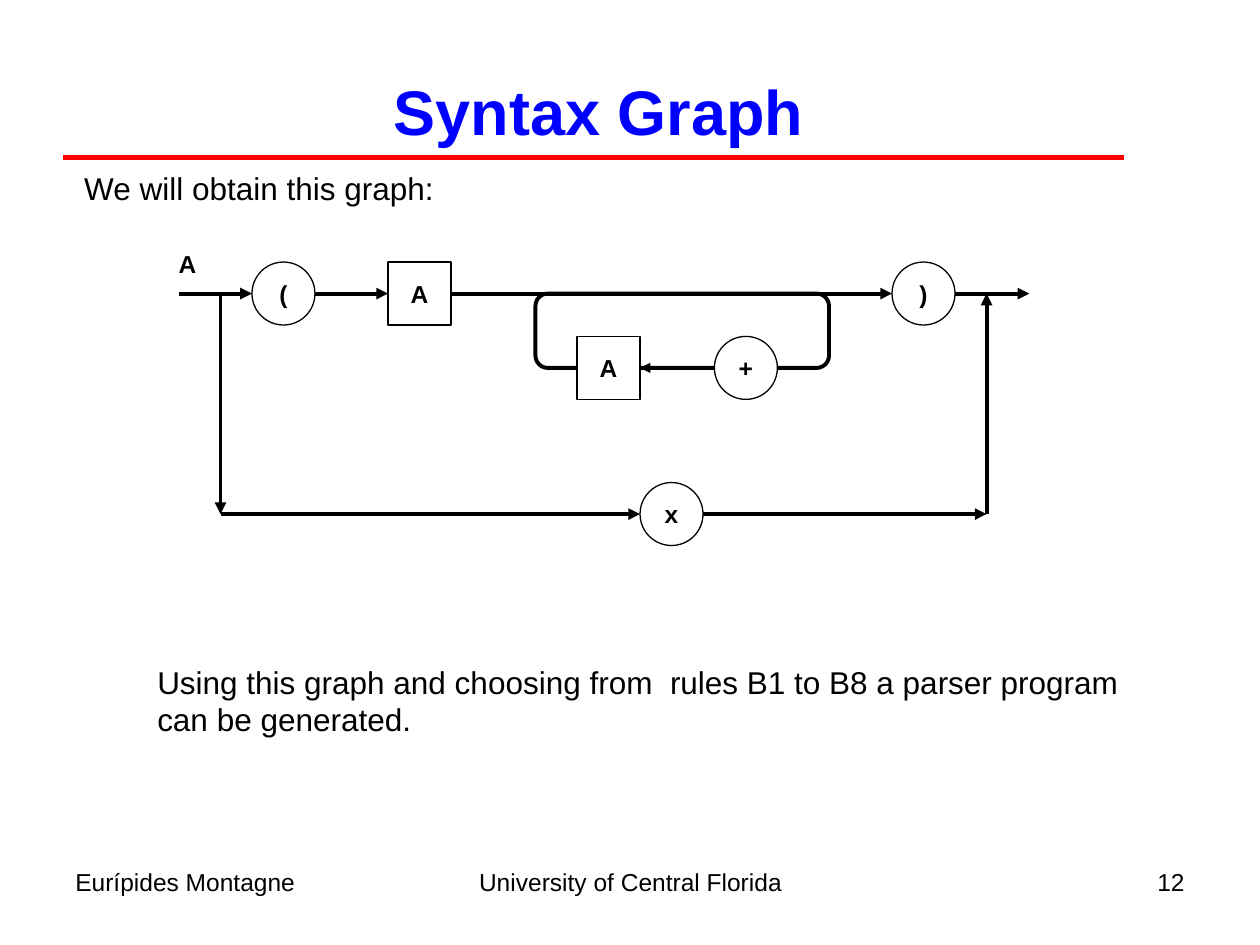
from dataclasses import dataclass

from lxml.etree import SubElement
from pptx import Presentation
from pptx.dml.color import RGBColor
from pptx.enum.shapes import MSO_CONNECTOR, MSO_SHAPE
from pptx.enum.text import MSO_ANCHOR, PP_ALIGN
from pptx.oxml.ns import qn
from pptx.util import Inches, Pt


@dataclass(frozen=True)
class Theme:
    font: str = "Arial"
    ink: RGBColor = RGBColor(0, 0, 0)
    paper: RGBColor = RGBColor(255, 255, 255)
    title_color: RGBColor = RGBColor(0, 0, 255)
    rule_color: RGBColor = RGBColor(255, 0, 0)
    title_size: int = 36
    body_size: int = 18
    label_size: int = 14
    thin: float = 0.75
    thick: float = 2.25
    rule: float = 3


class SlideBuilder:
    NODE_SIZE = 0.5

    def __init__(self, slide, theme):
        self.slide = slide
        self.theme = theme

    def style(self, paragraph, size, bold=False, color=None, align=PP_ALIGN.LEFT):
        paragraph.alignment = align
        font = paragraph.font
        font.name = self.theme.font
        font.size = Pt(size)
        font.bold = bold
        font.color.rgb = color or self.theme.ink

    def text(self, box, lines, size, wrap=False, anchor=MSO_ANCHOR.TOP, **style):
        shape = self.slide.shapes.add_textbox(*map(Inches, box))
        frame = shape.text_frame
        frame.word_wrap = wrap
        frame.vertical_anchor = anchor
        frame.text = "\n".join(lines)
        for paragraph in frame.paragraphs:
            self.style(paragraph, size, **style)

    def outline(self, kind, box, width):
        shape = self.slide.shapes.add_shape(kind, *map(Inches, box))
        shape.shadow.inherit = False
        shape.fill.background()
        shape.line.color.rgb = self.theme.ink
        shape.line.width = Pt(width)
        return shape

    def node(self, kind, left, middle, label):
        """Draw a labelled graph symbol centred vertically on its row."""
        size = self.NODE_SIZE
        shape = self.outline(kind, (left, middle - size / 2, size, size), self.theme.thin)
        shape.fill.solid()
        shape.fill.fore_color.rgb = self.theme.paper
        frame = shape.text_frame
        frame.word_wrap = False
        frame.vertical_anchor = MSO_ANCHOR.MIDDLE
        frame.text = label
        self.style(frame.paragraphs[0], self.theme.label_size, bold=True,
                   align=PP_ALIGN.CENTER)
        return shape

    def line(self, start, end, width, color=None):
        connector = self.slide.shapes.add_connector(
            MSO_CONNECTOR.STRAIGHT, *map(Inches, start + end))
        connector.line.color.rgb = color or self.theme.ink
        connector.line.width = Pt(width)
        SubElement(connector._element.spPr, qn("a:effectLst"))
        return connector

    def arrow(self, start, end, width=None):
        connector = self.line(start, end, width or self.theme.thick)
        SubElement(connector.line._get_or_add_ln(), qn("a:tailEnd"), type="triangle")
        return connector


def add_frame(builder):
    """Add the title, its rule and the footer."""
    theme = builder.theme
    builder.text((0.25, 0.25, 9, 1.25), ["Syntax Graph"], theme.title_size, wrap=True,
                 anchor=MSO_ANCHOR.MIDDLE, bold=True, color=theme.title_color,
                 align=PP_ALIGN.CENTER)
    builder.line((0.5, 1.25), (8.92, 1.25), theme.rule, theme.rule_color)
    footers = [
        (0.5, 2.33, "Eurípides Montagne", PP_ALIGN.LEFT),
        (3.42, 3.17, "University of Central Florida", PP_ALIGN.CENTER),
        (7.17, 2.33, "12", PP_ALIGN.RIGHT),
    ]
    for left, width, label, align in footers:
        builder.text((left, 6.83, width, 0.52), [label], theme.label_size,
                     wrap=True, align=align)


def add_syntax_graph(builder):
    theme = builder.theme
    main_row, loop_row, bypass_row = 2.33, 2.92, 4.08
    branch, merge = 1.75, 7.83

    builder.outline(MSO_SHAPE.FLOWCHART_ALTERNATE_PROCESS,
                    (4.25, main_row, 2.33, loop_row - main_row), theme.thick)
    first_a = builder.node(MSO_SHAPE.RECTANGLE, 3.08, main_row, "A")
    repeated_a = builder.node(MSO_SHAPE.RECTANGLE, 4.58, loop_row, "A")
    terminals = [(2, main_row, "("), (7.08, main_row, ")"),
                 (5.67, loop_row, "+"), (5.08, bypass_row, "x")]
    for left, row, label in terminals:
        builder.node(MSO_SHAPE.OVAL, left, row, label)

    builder.arrow((2.5, main_row), (3.08, main_row)).end_connect(first_a, 1)
    builder.arrow((3.58, main_row), (7.08, main_row)).begin_connect(first_a, 3)
    builder.arrow((5.33, loop_row), (5.08, loop_row), theme.thin).end_connect(repeated_a, 3)
    free_arrows = [
        ((1.42, main_row), (2, main_row)),
        ((7.58, main_row), (8.17, main_row)),
        ((branch, main_row), (branch, bypass_row)),
        ((branch, bypass_row), (5.08, bypass_row)),
        ((5.58, bypass_row), (merge, bypass_row)),
        ((merge, bypass_row), (merge, main_row)),
    ]
    for start, end in free_arrows:
        builder.arrow(start, end)
    builder.text((1.32, 1.93, 0.34, 0.33), ["A"], theme.label_size, bold=True)


def main():
    presentation = Presentation()
    presentation.slide_width = Inches(10)
    presentation.slide_height = Inches(7.5)
    slide = presentation.slides.add_slide(presentation.slide_layouts[6])
    theme = Theme()
    builder = SlideBuilder(slide, theme)

    add_frame(builder)
    add_syntax_graph(builder)
    builder.text((0.57, 1.29, 2.98, 0.4), ["We will obtain this graph:"], theme.body_size)
    builder.text((1.15, 5.21, 7.9, 0.7),
                 ["Using this graph and choosing from  rules B1 to B8 a parser program",
                  "can be generated."], theme.body_size)
    presentation.save("out.pptx")


if __name__ == "__main__":
    main()
